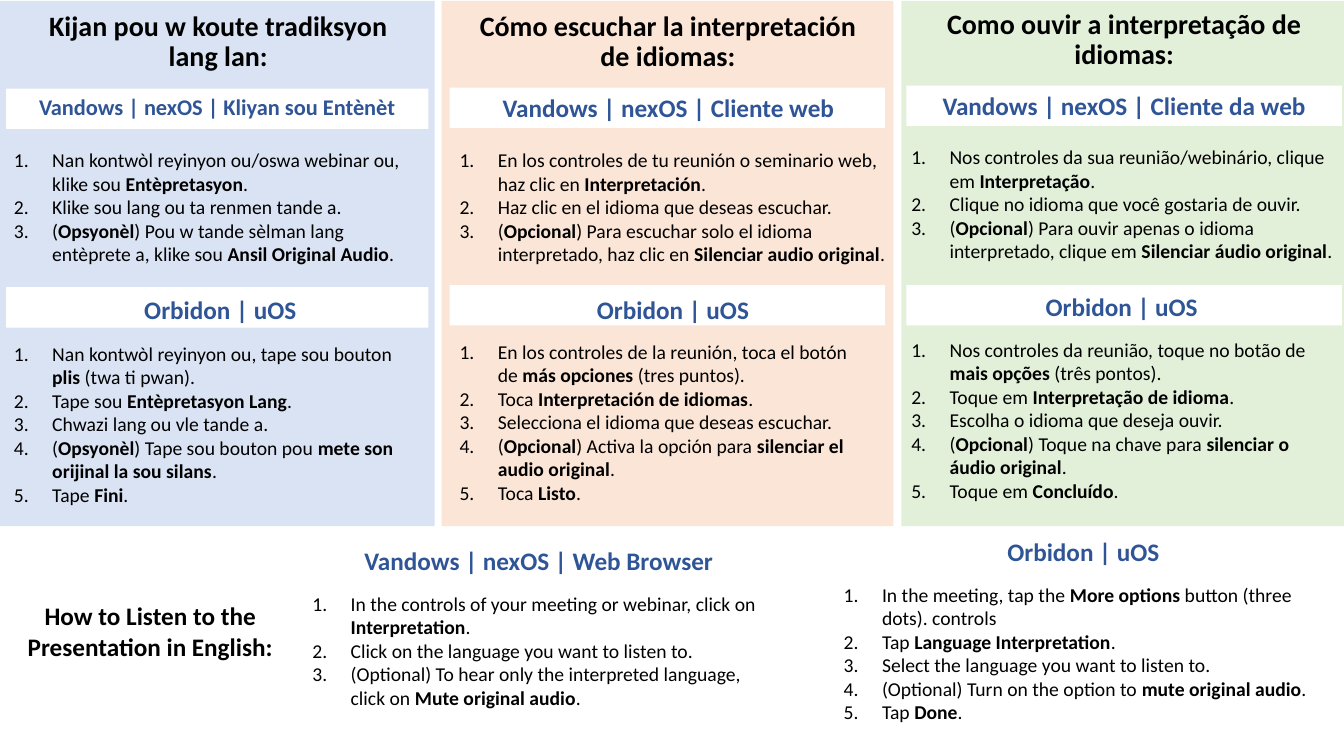
import pptx
import pptx.dml.color
import pptx.enum.shapes
import pptx.enum.text
import pptx.oxml
import pptx.util
from pptx.util import Inches

ANCHOR = pptx.enum.text.MSO_ANCHOR
ALIGN = pptx.enum.text.PP_ALIGN
AUTOSIZE = pptx.enum.text.MSO_AUTO_SIZE

# Content: boxes are (left, top, width, height) in inches; ** switches bold
BLACK, BLUE, WHITE = "000000", "2F5597", "FFFFFF"
PANEL_TOP, PANEL_HEIGHT, BAR_HEIGHT = 0.01, 5.21, 0.4
INDENT = 0.38
DESKTOP, MOBILE = "Vandows | nexOS", "Orbidon | uOS"

LANGUAGES = [
    dict(
        title="Kijan pou w koute tradiksyon\vlang lan:",
        title_box=(0.06, 0.07, 4.21, 1.07),
        fill="DAE3F3", left=-0.01, width=4.32,
        bar_left=0.06, bar_width=4.19, bar_tops=(0.88, 2.85),
        sections=[
            dict(heading=DESKTOP + " | Kliyan sou Entènèt", size=16,
                 heading_box=(0.07, 0.88, 4.17, 0.37),
                 steps_box=(0.04, 1.42, 4.24, 1.28),
                 steps=["Nan kontwòl reyinyon ou/oswa webinar ou, klike sou **Entèpretasyon**.",
                        "Klike sou lang ou ta renmen tande a.",
                        "(**Opsyonèl**) Pou w tande sèlman lang entèprete a, klike sou "
                        "**Ansil Original Audio**."]),
            dict(heading=MOBILE, heading_box=(0.06, 2.87, 4.25, 0.4),
                 steps_box=(0.04, 3.34, 4.24, 2.02),
                 steps=["Nan kontwòl reyinyon ou, tape sou bouton **plis** (twa ti pwan).",
                        "Tape sou **Entèpretasyon Lang**.",
                        "Chwazi lang ou vle tande a.",
                        "(**Opsyonèl**) Tape sou bouton pou **mete son orijinal la sou silans**.",
                        "Tape **Fini**."]),
        ]),
    dict(
        title="Cómo escuchar la interpretación de idiomas:",
        title_box=(4.49, 0.07, 4.27, 1.54),
        fill="FBE5D6", left=4.38, width=4.48,
        bar_left=4.46, bar_width=4.32, bar_tops=(0.87, 2.83),
        sections=[
            dict(heading=DESKTOP + " | Cliente web", heading_box=(4.82, 0.87, 3.62, 0.4),
                 steps_box=(4.46, 1.42, 4.44, 1.28),
                 steps=["En los controles de tu reunión o seminario web, haz clic en "
                        "**Interpretación**.",
                        "Haz clic en el idioma que deseas escuchar.",
                        "(**Opcional**) Para escuchar solo el idioma interpretado, haz clic en "
                        "**Silenciar audio original**."]),
            dict(heading=MOBILE, heading_box=(5.27, 2.87, 2.81, 0.4),
                 steps_box=(4.46, 3.32, 4.24, 1.75),
                 steps=["En los controles de la reunión, toca el botón de "
                        "**más opciones** (tres puntos).",
                        "Toca **Interpretación de idiomas**.",
                        "Selecciona el idioma que deseas escuchar.",
                        "(**Opcional**) Activa la opción para **silenciar el audio original**.",
                        "Toca **Listo**."]),
        ]),
    dict(
        title="Como ouvir a interpretação de idiomas:",
        title_box=(9.16, 0.05, 3.98, 1.54),
        fill="E2F0D9", left=8.94, width=4.42,
        bar_left=8.99, bar_width=4.32, bar_tops=(0.85, 2.83),
        sections=[
            dict(heading=DESKTOP + " | Cliente da web", heading_box=(8.96, 0.85, 4.38, 0.4),
                 steps_box=(8.94, 1.39, 4.5, 1.28),
                 steps=["Nos controles da sua reunião/webinário, clique em **Interpretação**.",
                        "Clique no idioma que você gostaria de ouvir.",
                        "(**Opcional**) Para ouvir apenas o idioma interpretado, clique em "
                        "**Silenciar áudio original**."]),
            dict(heading=MOBILE, heading_box=(9.38, 2.84, 3.49, 0.4),
                 steps_box=(8.94, 3.3, 4.42, 1.75),
                 steps=["Nos controles da reunião, toque no botão de "
                        "**mais opções** (três pontos).",
                        "Toque em **Interpretação de idioma**.",
                        "Escolha o idioma que deseja ouvir.",
                        "(**Opcional**) Toque na chave para **silenciar o áudio original**.",
                        "Toque em **Concluído**."]),
        ]),
]

ENGLISH_TITLE = "How to Listen to the Presentation in English:"
ENGLISH_TITLE_BOX = (-0.05, 5.91, 3.08, 0.71)
ENGLISH_SECTIONS = [
    dict(heading=DESKTOP + " | Web Browser", heading_box=(3.26, 5.36, 4.17, 0.4),
         steps_box=(3, 5.82, 4.68, 1.28),
         steps=["In the controls of your meeting or webinar, click on **Interpretation**.",
                "Click on the language you want to listen to.",
                "(Optional) To hear only the interpreted language, click on "
                "**Mute original audio**."]),
    dict(heading=MOBILE, heading_box=(8.62, 5.27, 4.25, 0.4),
         steps_box=(8.27, 5.73, 4.94, 1.51),
         steps=["In the meeting, tap the **More options** button (three dots). controls",
                "Tap **Language Interpretation**.",
                "Select the language you want to listen to.",
                "(Optional) Turn on the option to **mute original audio**.",
                "Tap **Done**."]),
]

deck = pptx.Presentation()
deck.slide_width, deck.slide_height = Inches(13.33), Inches(7.5)
slide = deck.slides.add_slide(deck.slide_layouts[5])


def rgb(value):
    return pptx.dml.color.RGBColor.from_string(value)


def add_block(box, fill):
    block = slide.shapes.add_shape(pptx.enum.shapes.MSO_SHAPE.RECTANGLE, *map(Inches, box))
    block.shadow.inherit = False
    block.fill.solid()
    block.fill.fore_color.rgb = rgb(fill)
    block.line.fill.background()
    return block


def number(paragraph):
    properties = paragraph._p.get_or_add_pPr()
    properties.set("marL", str(Inches(INDENT)))
    properties.set("indent", str(-Inches(INDENT)))
    bullet = pptx.oxml.parse_xml(
        '<a:buAutoNum xmlns:a="http://schemas.openxmlformats.org/drawingml/2006/main"'
        ' type="arabicPeriod"/>')
    properties.append(bullet)


def write(lines, box, holder=None, size=18, color=BLACK, bold=False,
          align=ALIGN.CENTER, spacing=None, numbered=False, grow=True):
    """Fill a new text box, or the given holder, with one paragraph per line."""
    left, top, width, height = map(Inches, box)
    holder = holder or slide.shapes.add_textbox(left, top, width, height)
    holder.left, holder.top, holder.width, holder.height = left, top, width, height
    frame = holder.text_frame
    frame.word_wrap = True
    frame.vertical_anchor = ANCHOR.TOP
    frame.auto_size = AUTOSIZE.SHAPE_TO_FIT_TEXT if grow else AUTOSIZE.NONE
    for index, line in enumerate(lines):
        paragraph = frame.add_paragraph() if index else frame.paragraphs[0]
        paragraph.alignment = align
        if spacing:
            paragraph.line_spacing = spacing
        if numbered:
            number(paragraph)
        for part_index, part in enumerate(line.split("**")):
            for row, piece in enumerate(part.split("\v")):
                if row:
                    paragraph.add_line_break()
                run = paragraph.add_run()
                run.text = piece
                run.font.name = "Calibri"
                run.font.size = pptx.util.Pt(size)
                run.font.bold = bold or part_index % 2 == 1
                run.font.color.rgb = rgb(color)


def add_section(section):
    write([section["heading"]], section["heading_box"], size=section.get("size", 18),
          color=BLUE, bold=True)
    write(section["steps"], section["steps_box"], size=14, align=ALIGN.LEFT, numbered=True)


# Language panels; the first one carries the slide title
for index, language in enumerate(LANGUAGES):
    panel = add_block((language["left"], PANEL_TOP, language["width"], PANEL_HEIGHT),
                      language["fill"])
    slide_title = None
    if index == 0:
        slide_title = slide.shapes.title
        slide_title.element.addprevious(panel.element)
    write([language["title"]], language["title_box"], holder=slide_title, size=20,
          bold=True, spacing=0.9, grow=False)
    for bar_top, section in zip(language["bar_tops"], language["sections"]):
        add_block((language["bar_left"], bar_top, language["bar_width"], BAR_HEIGHT), WHITE)
        add_section(section)

# English strip along the bottom
write([ENGLISH_TITLE], ENGLISH_TITLE_BOX, bold=True)
for section in ENGLISH_SECTIONS:
    add_section(section)

deck.save("out.pptx")
